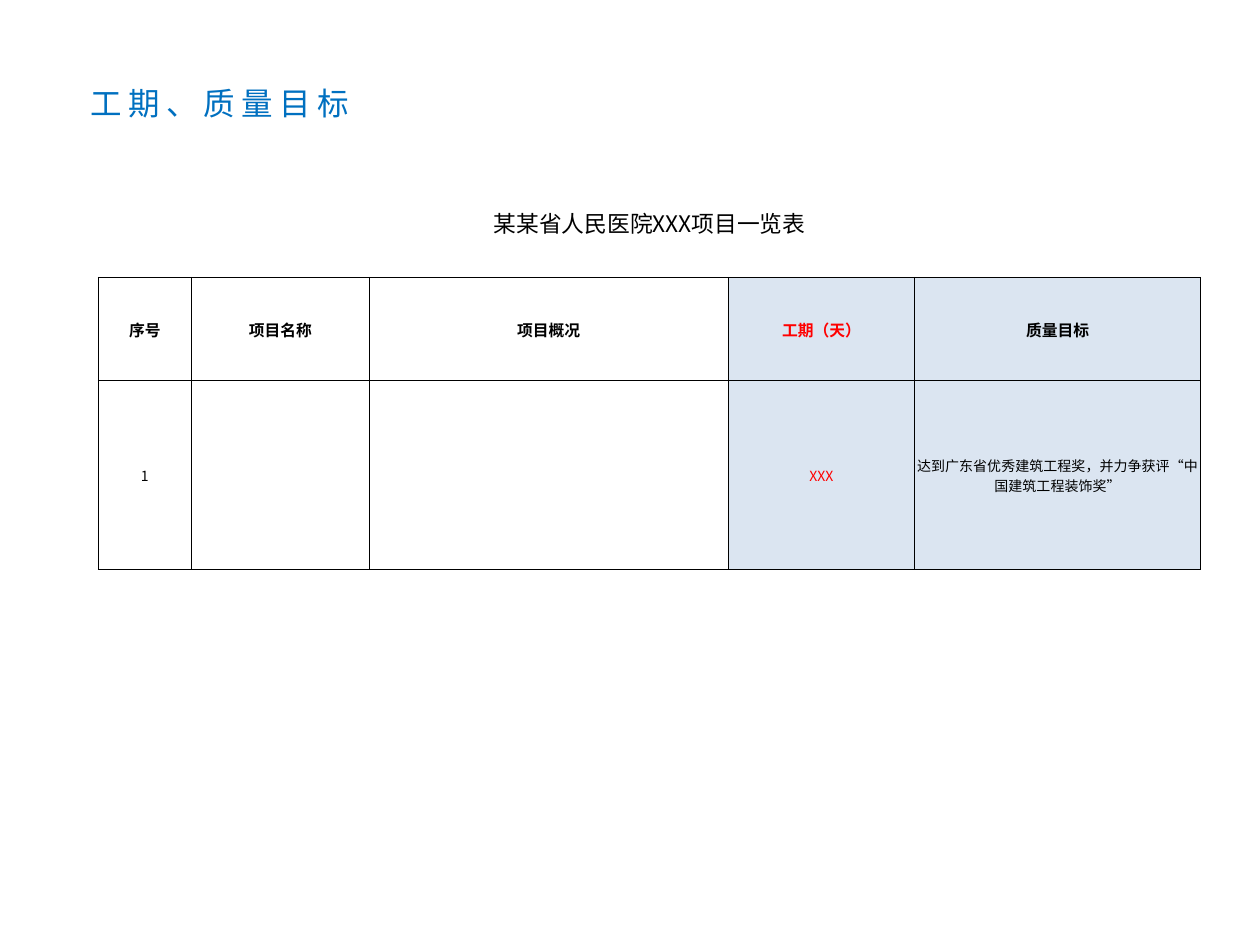
from dataclasses import dataclass

from lxml import etree
from pptx import Presentation
from pptx import util as u
from pptx.dml.color import RGBColor
from pptx.enum import text
from pptx.oxml.ns import qn


@dataclass(frozen=True)
class Theme:
    font: str = "Noto Sans CJK SC"
    blue: str = "0070C0"
    red: str = "FF0000"
    black: str = "000000"
    tint: str = "DBE5F1"
    title: int = 18
    table: int = 13
    head: int = 9
    body: int = 8
    track: float = 3.6
    rule: float = 0.5


class Deck:
    def __init__(self, theme, width, height):
        self.theme = theme
        self.show = Presentation()
        self.show.slide_width = u.Inches(width)
        self.show.slide_height = u.Inches(height)
        self.slide = self.show.slides.add_slide(self.show.slide_layouts[6])

    def across(self, share):
        return round(self.show.slide_width * share / 100)

    def down(self, share):
        return round(self.show.slide_height * share / 100)

    def place(self, left, top, width, height):
        return self.across(left), self.down(top), self.across(width), self.down(height)

    def label(self, para, words, size, color, bold=False, track=0):
        run = para.add_run()
        run.text = words
        run.font.color.rgb = RGBColor.from_string(color)
        style = {"size": u.Pt(size), "bold": bold, "name": self.theme.font}
        for key, value in style.items():
            setattr(run.font, key, value)
        props = run._r.get_or_add_rPr()
        etree.SubElement(props, qn("a:ea"), typeface=self.theme.font)
        if track:
            props.set("spc", str(round(track * 100)))

    def title(self, words, box):
        frame = self.slide.shapes.add_textbox(*self.place(*box)).text_frame
        frame.word_wrap = False
        frame.auto_size = text.MSO_AUTO_SIZE.SHAPE_TO_FIT_TEXT
        look = self.theme
        self.label(frame.paragraphs[0], words, look.title, look.blue, track=look.track)

    def border(self, cell, sides):
        props = cell._tc.get_or_add_tcPr()
        for spot, side in enumerate(sides):
            line = etree.Element(qn(f"a:ln{side}"), w=str(u.Pt(self.theme.rule)))
            fill = etree.SubElement(line, qn("a:solidFill"))
            etree.SubElement(fill, qn("a:srgbClr"), val=self.theme.black)
            props.insert(spot, line)

    def cell(self, cell, words, size, color, bold=False, tint=None, sides="LRTB"):
        pad = u.Inches(0.01)
        style = {
            "margin_left": pad,
            "margin_right": pad,
            "margin_top": pad,
            "margin_bottom": 0,
            "vertical_anchor": text.MSO_ANCHOR.MIDDLE,
        }
        for key, value in style.items():
            setattr(cell, key, value)
        if tint:
            cell.fill.solid()
            cell.fill.fore_color.rgb = RGBColor.from_string(tint)
        else:
            cell.fill.background()
        self.border(cell, sides)
        if words:
            para = cell.text_frame.paragraphs[0]
            para.alignment = text.PP_ALIGN.CENTER
            self.label(para, words, size, color, bold)

    def table(self, rows, spot, cols, heights, key, tinted):
        look = self.theme
        box = self.place(*spot, sum(cols), sum(heights))
        grid = self.slide.shapes.add_table(len(rows), len(cols), *box).table
        grid.first_row = grid.horz_banding = False
        for col, share in zip(grid.columns, cols):
            col.width = self.across(share)
        for row, share in zip(grid.rows, heights):
            row.height = self.down(share)
        grid.cell(0, 0).merge(grid.cell(0, len(cols) - 1))
        sizes = look.table, look.head, look.body
        for r, (row, size) in enumerate(zip(rows, sizes)):
            for c, words in enumerate(row):
                self.cell(
                    grid.cell(r, c), words, size,
                    look.red if r and c == key else look.black,
                    bold=r == 1,
                    tint=look.tint if r and c in tinted else None,
                    sides="LRTB" if r else "B",
                )

    def save(self):
        self.show.save("out.pptx")


def main():
    deck = Deck(Theme(), 10, 7.5)
    deck.title("工期、质量目标", (6.2, 8.27, 23, 5.33))
    rows = [
        ["某某省人民医院XXX项目一览表", "", "", "", ""],
        ["序号", "项目名称", "项目概况", "工期（天）", "质量目标"],
        ["1", "", "", "XXX", "达到广东省优秀建筑工程奖，并力争获评“中国建筑工程装饰奖”"],
    ]
    deck.table(
        rows,
        spot=(7.8, 17.73),
        cols=(7.4, 14.1, 28.5, 14.8, 22.7),
        heights=(11.6, 10.93, 20),
        key=3,
        tinted=(3, 4),
    )
    deck.save()


if __name__ == "__main__":
    main()
